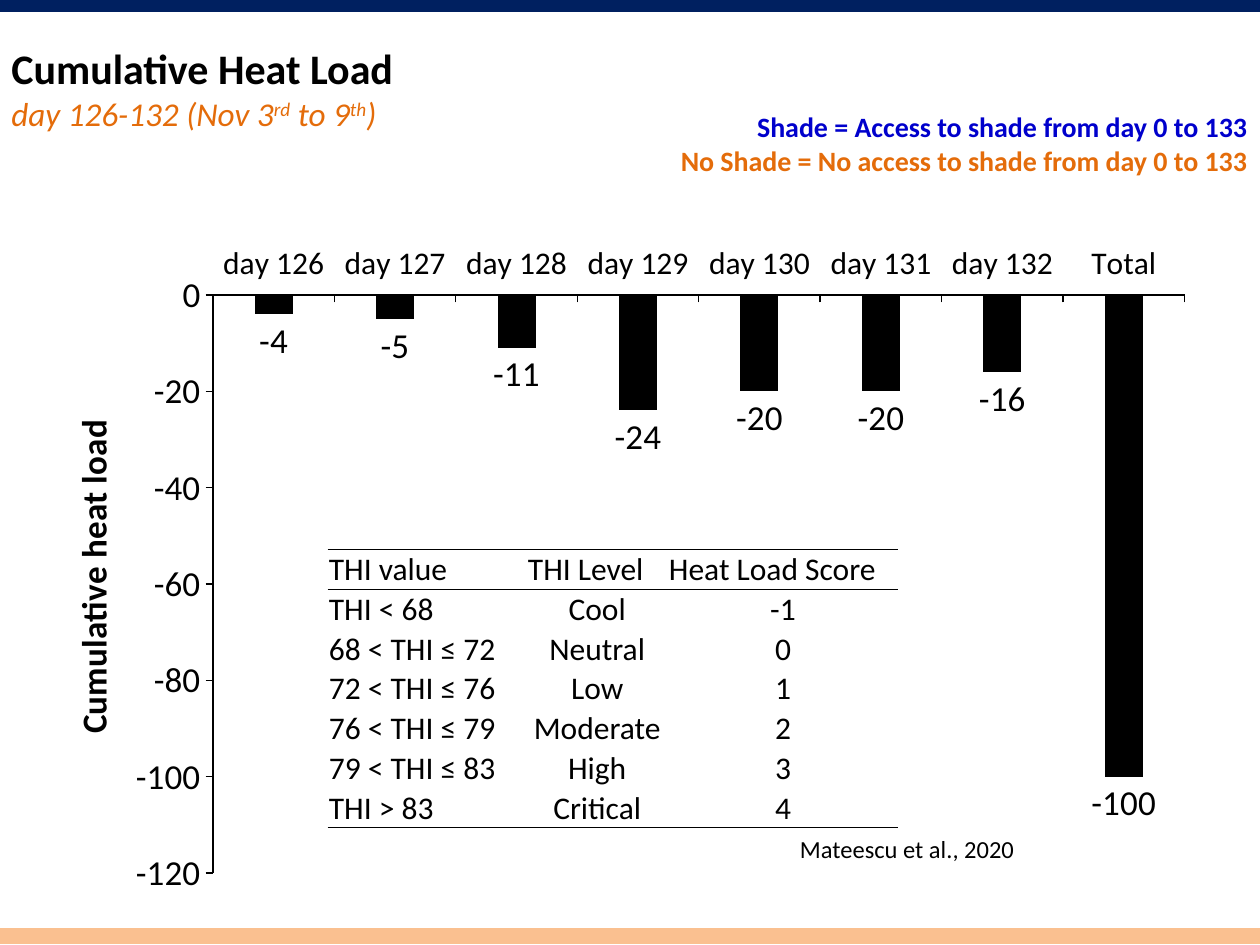
from lxml import etree
from pptx import Presentation
from pptx.chart.data import CategoryChartData
from pptx.dml.color import RGBColor
from pptx.enum.chart import XL_CHART_TYPE as ChartType
from pptx.enum.chart import XL_LABEL_POSITION as LabelPosition
from pptx.enum.chart import XL_TICK_LABEL_POSITION as TickLabels
from pptx.enum.chart import XL_TICK_MARK as TickMark
from pptx.enum.shapes import MSO_SHAPE as Preset
from pptx.enum.text import MSO_ANCHOR as Anchor
from pptx.enum.text import MSO_AUTO_SIZE as AutoSize
from pptx.enum.text import PP_ALIGN as Align
from pptx.oxml import parse_xml
from pptx.oxml.ns import nsdecls, qn
from pptx.util import Inches, Pt

BLACK = RGBColor(0x00, 0x00, 0x00)
WHITE = RGBColor(0xFF, 0xFF, 0xFF)
NAVY = RGBColor(0x00, 0x20, 0x60)
PEACH = RGBColor(0xFA, 0xC0, 0x90)
ORANGE = RGBColor(0xE4, 0x6C, 0x0A)
BLUE = RGBColor(0x00, 0x00, 0xCC)

HEAT_LOADS = {
    "day 126": -4, "day 127": -5, "day 128": -11, "day 129": -24,
    "day 130": -20, "day 131": -20, "day 132": -16, "Total": -100,
}
SCORES = [
    ("THI value", "THI Level", "Heat Load Score"),
    ("THI < 68", "Cool", "-1"),
    ("68 < THI ≤ 72", "Neutral", "0"),
    ("72 < THI ≤ 76", "Low", "1"),
    ("76 < THI ≤ 79", "Moderate", "2"),
    ("79 < THI ≤ 83", "High", "3"),
    ("THI > 83", "Critical", "4"),
]


def style(font, size, color=BLACK, bold=False, italic=False):
    font.name = "Calibri"
    font.size = Pt(size)
    font.bold = bold
    font.italic = italic
    font.color.rgb = color


def add_band(slide, box, color):
    band = slide.shapes.add_shape(Preset.RECTANGLE, *map(Inches, box))
    band.shadow.inherit = False
    band.fill.solid()
    band.fill.fore_color.rgb = color
    band.line.color.rgb = color
    band.line.width = Pt(0.75)


def place_title(slide, box):
    title = slide.shapes.title
    title.left, title.top, title.width, title.height = map(Inches, box)
    frame = title.text_frame
    frame.auto_size = AutoSize.NONE
    frame.vertical_anchor = Anchor.TOP
    frame.text = "Cumulative Heat Load"
    heading = frame.paragraphs[0]
    heading.alignment = Align.LEFT
    style(heading.runs[0].font, 24, bold=True)
    heading.add_line_break()
    for index, part in enumerate(["day 126-132 (Nov 3", "rd", " to 9", "th", ")"]):
        run = heading.add_run()
        run.text = part
        style(run.font, 19, ORANGE, italic=True)
        if index % 2:
            run.font._element.set("baseline", "30000")


def add_lines(slide, box, lines, size, bold=False, align=Align.LEFT, wrap=True):
    frame = slide.shapes.add_textbox(*map(Inches, box)).text_frame
    frame.word_wrap = wrap
    frame.text = "\n".join(text for text, color in lines)
    for paragraph, (text, color) in zip(frame.paragraphs, lines):
        paragraph.alignment = align
        style(paragraph.runs[0].font, size, color, bold)


def set_layout(parent, index, target=None, **fractions):
    for old in parent.findall(qn("c:layout")):
        parent.remove(old)
    layout = parse_xml(f"<c:layout {nsdecls('c')}><c:manualLayout/></c:layout>")
    values = {"layoutTarget": target} if target else {}
    values.update(xMode="edge", yMode="edge", **fractions)
    for tag, value in values.items():
        etree.SubElement(layout[0], qn(f"c:{tag}")).set("val", str(value))
    parent.insert(index, layout)


def style_axis(axis, size):
    axis.has_major_gridlines = False
    axis.major_tick_mark = TickMark.OUTSIDE
    axis.minor_tick_mark = TickMark.NONE
    axis.format.line.color.rgb = BLACK
    axis.format.line.width = Pt(0.75)
    style(axis.tick_labels.font, size)


def add_heat_chart(slide, box):
    loads = CategoryChartData()
    loads.categories = list(HEAT_LOADS)
    loads.add_series("Series 1", list(HEAT_LOADS.values()))
    chart = slide.shapes.add_chart(
        ChartType.COLUMN_CLUSTERED, *map(Inches, box), loads).chart
    chart.has_legend = False
    chart.has_title = False
    style(chart.font, 20)

    days, score = chart.category_axis, chart.value_axis
    style_axis(days, 18)
    days.tick_label_position = TickLabels.HIGH
    style_axis(score, 20)
    score.minimum_scale, score.maximum_scale, score.major_unit = -120, 0, 20
    caption = score.axis_title.text_frame
    caption.text = "Cumulative heat load"
    style(caption.paragraphs[0].runs[0].font, 20, bold=True)
    caption._txBody.bodyPr.set("rot", "-5400000")
    caption._txBody.bodyPr.set("vert", "horz")

    plot = chart.plots[0]
    plot.gap_width, plot.overlap = 219, -27
    plot.vary_by_categories = False
    bars = plot.series[0]
    bars.invert_if_negative = False
    bars.format.fill.solid()
    bars.format.fill.fore_color.rgb = BLACK
    labels = bars.data_labels
    labels.show_value = True
    labels.position = LabelPosition.OUTSIDE_END
    style(labels.font, 20)

    set_layout(score.axis_title._element, 1, x=0.03, y=0.27)
    set_layout(chart._chartSpace.chart.plotArea, 0, "inner",
               x=0.158, y=0.095, w=0.823, h=0.853)


def set_borders(cell, ruled):
    properties = cell._tc.get_or_add_tcPr()
    for index, side in enumerate("LRTB"):
        if side in ruled:
            stroke = f'<a:solidFill><a:srgbClr val="{BLACK}"/></a:solidFill>'
        else:
            stroke = "<a:noFill/>"
        properties.insert(index, parse_xml(
            f'<a:ln{side} {nsdecls("a")} w="6350">{stroke}</a:ln{side}>'))


def add_score_table(slide, box):
    table = slide.shapes.add_table(
        len(SCORES), len(SCORES[0]), *map(Inches, box)).table
    table.first_row = table.horz_banding = False
    for column, width in zip(table.columns, (1.58, 1.12, 1.83)):
        column.width = Inches(width)
    ruled_sides = {0: "TB", 1: "T", len(SCORES) - 1: "B"}
    for row, entries in enumerate(SCORES):
        for col, entry in enumerate(entries):
            cell = table.cell(row, col)
            cell.margin_left = cell.margin_right = cell.margin_top = Inches(0.01)
            cell.margin_bottom = 0
            cell.vertical_anchor = Anchor.MIDDLE
            cell.fill.solid()
            cell.fill.fore_color.rgb = WHITE
            set_borders(cell, ruled_sides.get(row, ""))
            cell.text_frame.text = entry
            paragraph = cell.text_frame.paragraphs[0]
            paragraph.alignment = Align.CENTER if row and col else Align.LEFT
            style(paragraph.runs[0].font, 18)


def main():
    deck = Presentation()
    deck.slide_width, deck.slide_height = Inches(10), Inches(7.5)
    slide = deck.slides.add_slide(deck.slide_layouts[5])
    add_band(slide, (0, -0.02, 10, 0.11), NAVY)
    add_band(slide, (0, 7.37, 10, 0.12), PEACH)
    place_title(slide, (-0.01, 0.29, 7.35, 1.01))
    add_heat_chart(slide, (0.21, 1.83, 9.37, 5.38))
    add_score_table(slide, (2.6, 4.36, 4.53, 2.2))
    add_lines(slide, (6.25, 6.57, 1.92, 0.34),
              [("Mateescu et al., 2020", BLACK)], 14, wrap=False)
    add_lines(slide, (4.33, 0.82, 5.67, 0.64),
              [("Shade = Access to shade from day 0 to 133", BLUE),
               ("No Shade = No access to shade from day 0 to 133", ORANGE)],
              16, bold=True, align=Align.RIGHT)
    deck.save("out.pptx")


if __name__ == "__main__":
    main()
